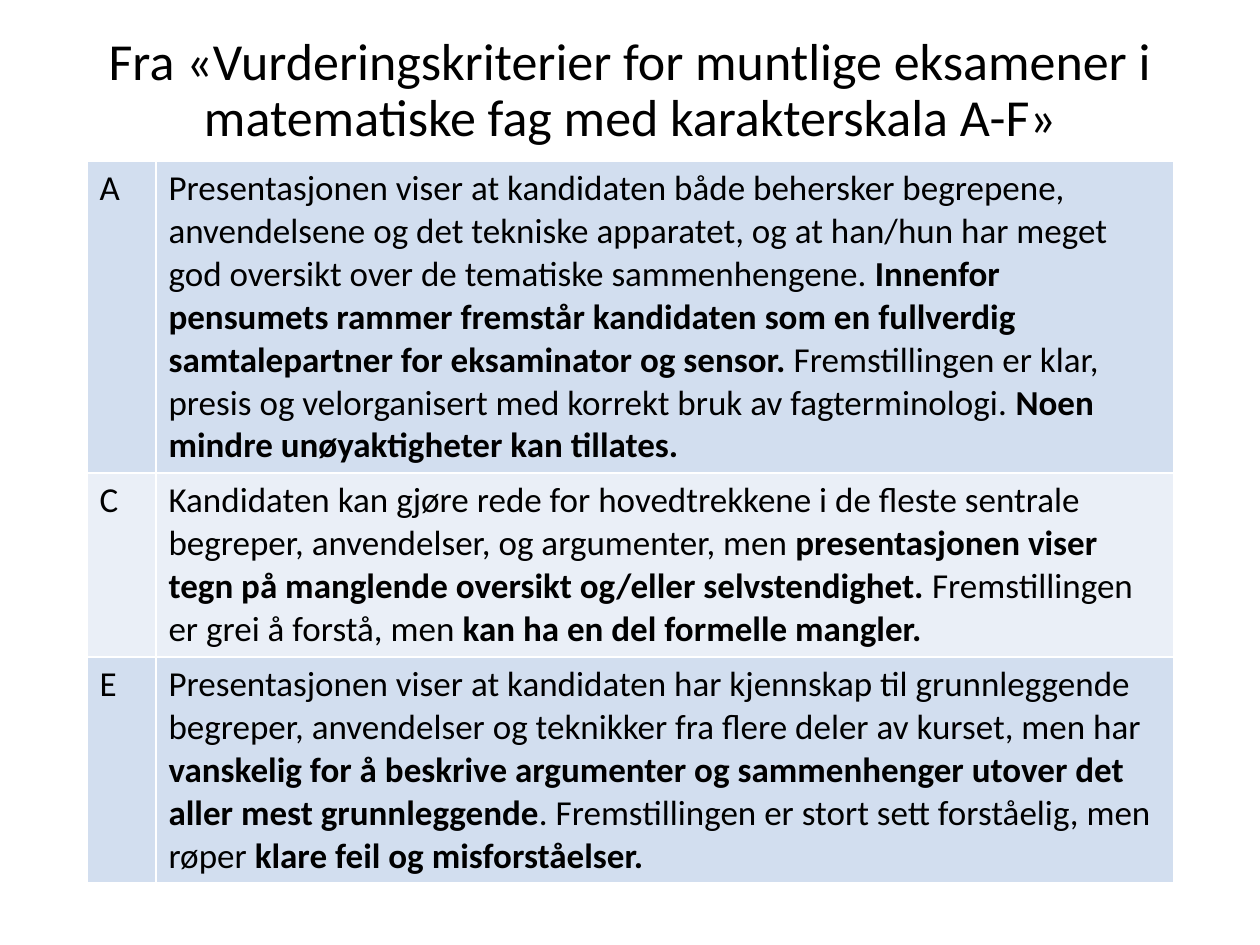
from dataclasses import dataclass

from lxml.etree import SubElement
from pptx import Presentation
from pptx.dml.color import RGBColor
from pptx.enum.text import MSO_ANCHOR, PP_ALIGN
from pptx.oxml.ns import qn
from pptx.slide import Slide
from pptx.table import _Cell
from pptx.util import Emu, Pt

PX_PER_INCH = 126
FONT = "Calibri"
BLACK = RGBColor(0x00, 0x00, 0x00)
WHITE = RGBColor(0xFF, 0xFF, 0xFF)
BAND_COLORS = (RGBColor(0xD2, 0xDE, 0xEF), RGBColor(0xEA, 0xEF, 0xF7))

TITLE = "Fra «Vurderingskriterier for muntlige eksamener i matematiske fag med karakterskala A-F»"
LEFT, TABLE_TOP = 87, 161
COLUMN_WIDTHS = (69, 1018)


@dataclass(frozen=True)
class Grade:
    letter: str
    height: int
    passages: tuple[str, ...]  # alternately regular and bold


GRADES = (
    Grade("A", 312, (
        "Presentasjonen viser at kandidaten både behersker begrepene, anvendelsene og det tekniske "
        "apparatet, og at han/hun har meget god oversikt over de tematiske sammenhengene. ",
        "Innenfor pensumets rammer fremstår kandidaten som en fullverdig samtalepartner for "
        "eksaminator og sensor.",
        " Fremstillingen er klar, presis og velorganisert med korrekt bruk av fagterminologi. ",
        "Noen mindre unøyaktigheter kan tillates.",
    )),
    Grade("C", 184, (
        "Kandidaten kan gjøre rede for hovedtrekkene i de fleste sentrale begreper, anvendelser, "
        "og argumenter, men ",
        "presentasjonen viser tegn på manglende oversikt og/eller selvstendighet. ",
        "Fremstillingen er grei å forstå, men ",
        "kan ha en del formelle mangler.",
    )),
    Grade("E", 226, (
        "Presentasjonen viser at kandidaten har kjennskap til grunnleggende begreper, anvendelser "
        "og teknikker fra flere deler av kurset, men har ",
        "vanskelig for å beskrive argumenter og sammenhenger utover det aller mest grunnleggende",
        ". Fremstillingen er stort sett forståelig, men røper ",
        "klare feil og misforståelser.",
    )),
)


def px(length: int) -> Emu:
    return Emu(round(length * 914400 / PX_PER_INCH))


def format_run(run, size: float, bold: bool = False) -> None:
    run.font.name = FONT
    run.font.size = Pt(size)
    run.font.bold = bold
    run.font.color.rgb = BLACK


def add_title(slide: Slide) -> None:
    shape = slide.shapes.add_textbox(px(LEFT), px(0), px(sum(COLUMN_WIDTHS)), px(183))
    text_frame = shape.text_frame
    text_frame.word_wrap = True
    text_frame.vertical_anchor = MSO_ANCHOR.MIDDLE
    text_frame.text = TITLE
    paragraph = text_frame.paragraphs[0]
    paragraph.alignment = PP_ALIGN.CENTER
    paragraph.line_spacing = 0.9
    format_run(paragraph.runs[0], 29.7)


def fill_cell(cell: _Cell, passages: tuple[str, ...], color: RGBColor) -> None:
    paragraph = cell.text_frame.paragraphs[0]
    for index, passage in enumerate(passages):
        run = paragraph.add_run()
        run.text = passage
        format_run(run, 20, bold=index % 2 == 1)
    # Borders come before the fill in the cell properties
    properties = cell._tc.get_or_add_tcPr()
    for side in ("lnL", "lnR", "lnT", "lnB"):
        line = SubElement(properties, qn(f"a:{side}"), w=str(Pt(1)))
        SubElement(SubElement(line, qn("a:solidFill")), qn("a:srgbClr"), val=str(WHITE))
    cell.fill.solid()
    cell.fill.fore_color.rgb = color


def add_grade_table(slide: Slide) -> None:
    height = sum(grade.height for grade in GRADES)
    table = slide.shapes.add_table(
        len(GRADES), len(COLUMN_WIDTHS),
        px(LEFT), px(TABLE_TOP), px(sum(COLUMN_WIDTHS)), px(height),
    ).table
    table.first_row = False
    table.horz_banding = False
    for column, width in zip(table.columns, COLUMN_WIDTHS):
        column.width = px(width)
    for index, grade in enumerate(GRADES):
        table.rows[index].height = px(grade.height)
        color = BAND_COLORS[index % 2]
        fill_cell(table.cell(index, 0), (grade.letter,), color)
        fill_cell(table.cell(index, 1), grade.passages, color)


def main() -> None:
    presentation = Presentation()
    presentation.slide_width = px(1260)
    presentation.slide_height = px(945)
    slide = presentation.slides.add_slide(presentation.slide_layouts[6])
    add_title(slide)
    add_grade_table(slide)
    presentation.save("out.pptx")


if __name__ == "__main__":
    main()
